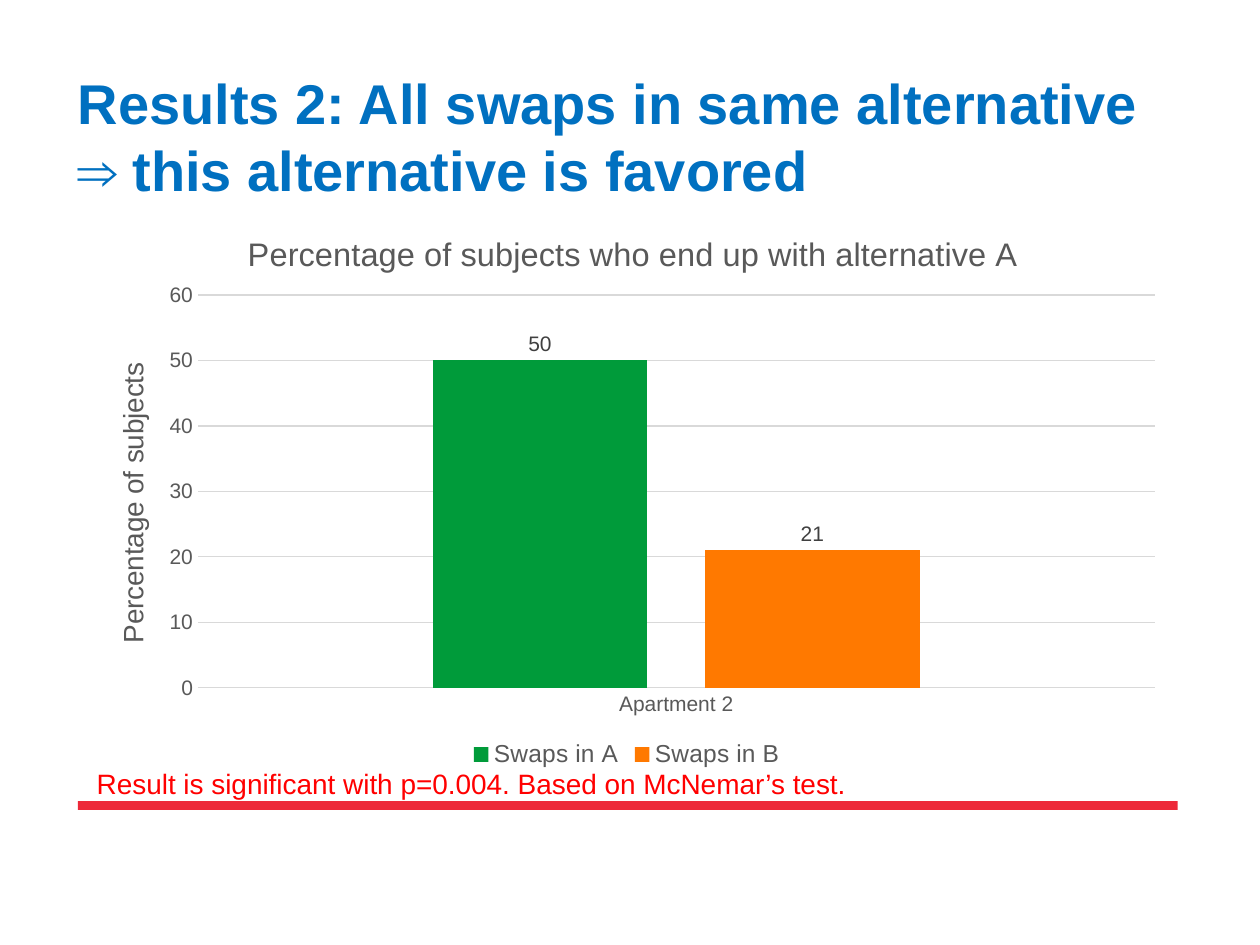
"""Build a results slide with a title, a column chart and a significance note."""
from dataclasses import dataclass

from lxml.etree import SubElement
from pptx import Presentation
from pptx.chart.data import CategoryChartData
from pptx.dml.color import RGBColor
from pptx.enum.chart import XL_CHART_TYPE, XL_LABEL_POSITION, XL_LEGEND_POSITION, XL_TICK_MARK
from pptx.enum.shapes import MSO_SHAPE
from pptx.enum.text import MSO_ANCHOR, MSO_AUTO_SIZE, PP_ALIGN
from pptx.oxml.ns import qn
from pptx.util import Cm, Pt


@dataclass(frozen=True)
class Theme:
    font: str = "Arial"
    symbol_font: str = "Times New Roman"
    heading: str = "0070C0"
    rule: str = "ED2939"
    note: str = "FF0000"
    chart_text: str = "595959"
    label_text: str = "404040"
    grid: str = "D9D9D9"
    heading_size: float = 32
    chart_title_size: float = 18.6
    body_size: float = 16
    legend_size: float = 14
    axis_size: float = 12


THEME = Theme()
TITLE_RUNS = [
    ("Results 2: All swaps in same alternative ", THEME.font),
    ("⇒ ", THEME.symbol_font),
    ("this alternative is favored", THEME.font),
]
CHART_TITLE = "Percentage of subjects who end up with alternative A"
AXIS_TITLE = "Percentage of subjects"
CATEGORIES = ["Apartment 2"]
SERIES = [("Swaps in A", 50, "009B3A"), ("Swaps in B", 21, "FF7900")]
NOTE = "Result is significant with p=0.004. Based on McNemar’s test."

TITLE_BOX = (Cm(1.57), Cm(1.35), Cm(22.17), Cm(2.77))
CHART_BOX = (Cm(1.55), Cm(4.11), Cm(22.17), Cm(11.48))
NOTE_BOX = (Cm(1.7), Cm(15.32), Cm(22.4), Cm(0.94))
RULE_BOX = (Cm(1.57), Cm(16.15), Cm(22.17), Cm(0.18))


def style_font(font, size, color):
    font.name = THEME.font
    font.size = Pt(size)
    font.color.rgb = RGBColor.from_string(color)
    font.bold = False


def place(element, **fractions):
    for old_layout in element.findall(qn("c:layout")):
        element.remove(old_layout)
    layout = SubElement(element, qn("c:layout"))
    element.insert(0 if element.find(qn("c:tx")) is None else 1, layout)
    manual = SubElement(layout, qn("c:manualLayout"))
    if "w" in fractions:
        SubElement(manual, qn("c:layoutTarget")).set("val", "inner")
    for name in ("x", "y"):
        SubElement(manual, qn(f"c:{name}Mode")).set("val", "edge")
    for name, value in fractions.items():
        SubElement(manual, qn(f"c:{name}")).set("val", str(value))


def add_chart_title(owner, title, text, size, **position):
    frame = title.text_frame
    frame.text = text
    style_font(frame.paragraphs[0].font, size, THEME.chart_text)
    place(owner.find(qn("c:title")), **position)


def set_title(slide):
    title = slide.shapes.title
    title.left, title.top, title.width, title.height = TITLE_BOX
    frame = title.text_frame
    frame.margin_left = frame.margin_right = frame.margin_top = frame.margin_bottom = 0
    frame.auto_size = MSO_AUTO_SIZE.NONE
    frame.vertical_anchor = MSO_ANCHOR.MIDDLE
    paragraph = frame.paragraphs[0]
    paragraph.alignment = PP_ALIGN.LEFT
    style_font(paragraph.font, THEME.heading_size, THEME.heading)
    paragraph.font.bold = True
    for text, font_name in TITLE_RUNS:
        run = paragraph.add_run()
        run.text = text
        run.font.name = font_name


def add_results_chart(slide):
    data = CategoryChartData()
    data.categories = CATEGORIES
    for name, value, _ in SERIES:
        data.add_series(name, [value])
    chart = slide.shapes.add_chart(XL_CHART_TYPE.COLUMN_CLUSTERED, *CHART_BOX, data).chart
    style_font(chart.font, THEME.axis_size, THEME.chart_text)

    plot = chart.plots[0]
    plot.gap_width, plot.overlap, plot.vary_by_categories = 219, -27, False
    for series, (_, _, color) in zip(plot.series, SERIES):
        series.format.fill.solid()
        series.format.fill.fore_color.rgb = RGBColor.from_string(color)
        labels = series.data_labels
        labels.show_value = True
        labels.position = XL_LABEL_POSITION.OUTSIDE_END
        style_font(labels.font, THEME.axis_size, THEME.label_text)

    category_axis, value_axis = chart.category_axis, chart.value_axis
    for axis in (category_axis, value_axis):
        axis.major_tick_mark = axis.minor_tick_mark = XL_TICK_MARK.NONE
        style_font(axis.tick_labels.font, THEME.axis_size, THEME.chart_text)
    value_axis.minimum_scale, value_axis.maximum_scale, value_axis.major_unit = 0, 60, 10
    value_axis.format.line.fill.background()
    for line in (category_axis.format.line, value_axis.major_gridlines.format.line):
        line.color.rgb = RGBColor.from_string(THEME.grid)
        line.width = Pt(0.75)

    chart.has_legend = True
    chart.legend.position = XL_LEGEND_POSITION.BOTTOM
    chart.legend.include_in_layout = False
    style_font(chart.legend.font, THEME.legend_size, THEME.chart_text)

    chart_element = chart.element.find(qn("c:chart"))
    plot_area = chart_element.find(qn("c:plotArea"))
    add_chart_title(chart_element, chart.chart_title, CHART_TITLE,
                    THEME.chart_title_size, x=0.15, y=0.04)
    add_chart_title(plot_area.find(qn("c:valAx")), value_axis.axis_title, AXIS_TITLE,
                    THEME.body_size, x=0.03, y=0.27)
    place(plot_area, x=0.11, y=0.16, w=0.87, h=0.69)


def add_rule(slide):
    rule = slide.shapes.add_shape(MSO_SHAPE.RECTANGLE, *RULE_BOX)
    rule.shadow.inherit = False
    rule.fill.solid()
    rule.fill.fore_color.rgb = RGBColor.from_string(THEME.rule)
    rule.line.fill.background()


def add_note(slide):
    frame = slide.shapes.add_textbox(*NOTE_BOX).text_frame
    frame.word_wrap = True
    frame.auto_size = MSO_AUTO_SIZE.SHAPE_TO_FIT_TEXT
    frame.text = NOTE
    style_font(frame.paragraphs[0].font, THEME.body_size, THEME.note)


def main():
    presentation = Presentation()
    presentation.slide_width, presentation.slide_height = Cm(25.4), Cm(19.05)
    slide = presentation.slides.add_slide(presentation.slide_layouts[5])
    add_rule(slide)
    set_title(slide)
    add_results_chart(slide)
    add_note(slide)
    presentation.save("out.pptx")


if __name__ == "__main__":
    main()
